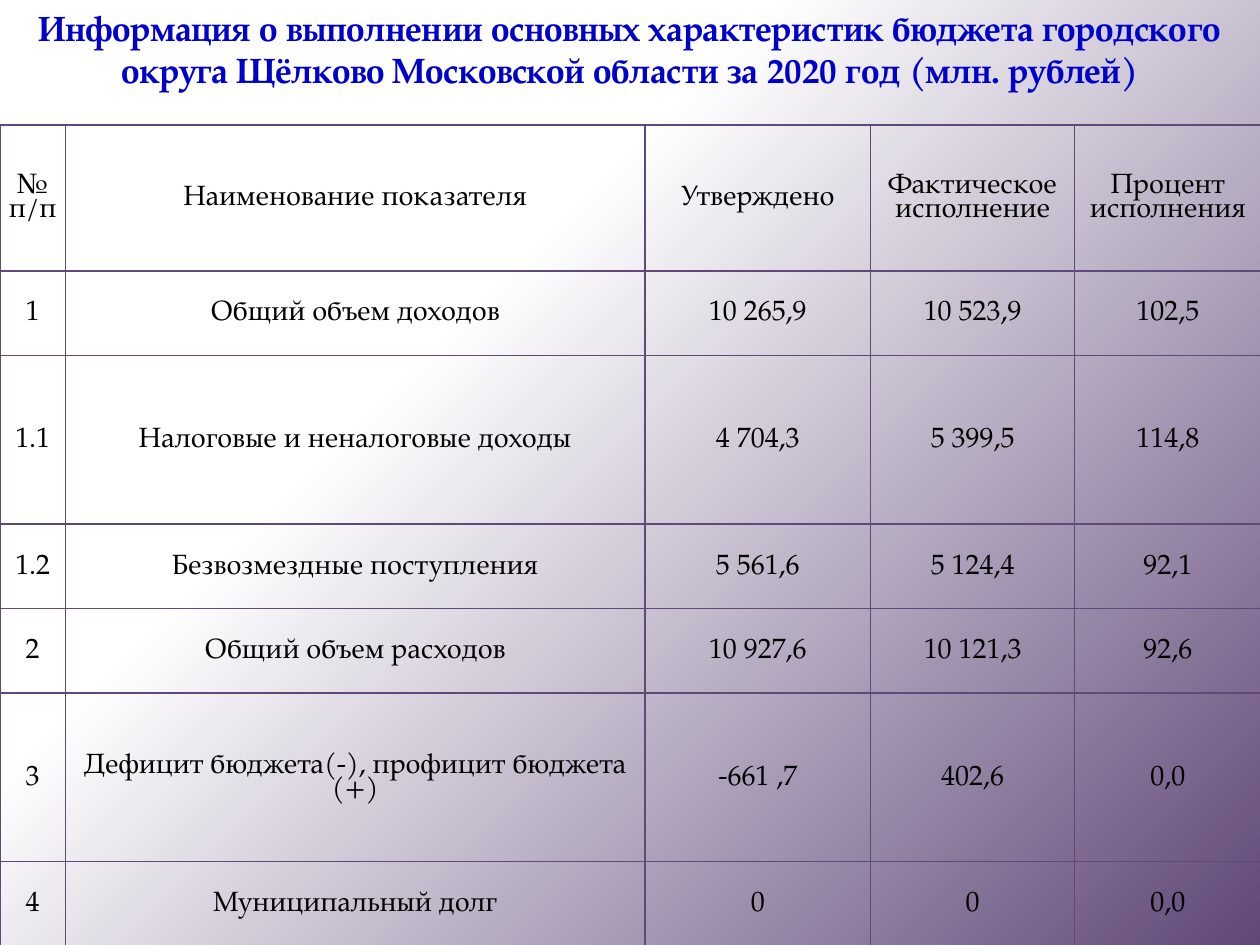
from copy import deepcopy
from lxml import etree
from pptx import Presentation
from pptx import util as u
from pptx.dml.color import RGBColor
from pptx.enum import text
from pptx.oxml.ns import qn

HEAD = "Информация о выполнении основных характеристик бюджета городского округа Щёлково Московской области за 2020 год (млн. рублей)"
ROWS = [
    ("№ п/п", "Наименование показателя", "Утверждено", "Фактическое исполнение", "Процент исполнения"),
    ("1", "Общий объем доходов", "10 265,9", "10 523,9", "102,5"),
    ("1.1", "Налоговые и неналоговые доходы", "4 704,3", "5 399,5", "114,8"),
    ("1.2", "Безвозмездные поступления", "5 561,6", "5 124,4", "92,1"),
    ("2", "Общий объем расходов", "10 927,6", "10 121,3", "92,6"),
    ("3", "Дефицит бюджета(-), профицит бюджета (+)", "-661 ,7", "402,6", "0,0"),
    ("4", "Муниципальный долг", "0", "0", "0,0"),
]
WIDTHS = [0.52, 4.6, 1.79, 1.62, 1.48]
UNIT = 0.67
HEIGHTS = [1.16] + [UNIT * n for n in (1, 2, 1, 1, 2, 1)]
PURPLE = "604878"
STOPS = [(0, "FFFFFF"), (0.35, "FFFFFF"), (1, PURPLE)]
FONT = "TeX Gyre Pagella"
TITLE = {"size": u.Pt(20), "bold": True, "name": FONT}
BODY = {"size": u.Pt(16), "bold": False, "name": FONT}
INSET = {"margin_left": u.Inches(0.01), "margin_right": u.Inches(0.01),
         "margin_top": u.Inches(0.01), "margin_bottom": 0,
         "vertical_anchor": text.MSO_ANCHOR.MIDDLE}


def tint(color, code):
    color.rgb = RGBColor.from_string(code)


def put(item, form):
    for key, val in form.items():
        setattr(item, key, val)


def write(frame, words, form, code, gap):
    frame.text = words
    line = frame.paragraphs[0]
    put(line, {"alignment": text.PP_ALIGN.CENTER, "line_spacing": gap, "space_before": u.Pt(0)})
    font = line.runs[0].font
    put(font, form)
    tint(font.color, code)


def border(cell, code):
    props = cell._tc.get_or_add_tcPr()
    for side in ("lnL", "lnR", "lnT", "lnB"):
        line = etree.SubElement(props, qn("a:" + side), w=str(u.Pt(1)))
        fill = etree.SubElement(line, qn("a:solidFill"))
        etree.SubElement(fill, qn("a:srgbClr"), val=code)


def shade(slide):
    fill = slide.background.fill
    fill.gradient()
    fill.gradient_angle = 315
    group = slide.element.find(".//" + qn("a:gsLst"))
    group.insert(1, deepcopy(group[0]))
    for stop, (pos, code) in zip(fill.gradient_stops, STOPS):
        stop.position = pos
        tint(stop.color, code)


def main():
    deck = Presentation()
    deck.slide_width, deck.slide_height = u.Inches(10), u.Inches(7.5)
    slide = deck.slides.add_slide(deck.slide_layouts[5])
    shade(slide)

    title = slide.shapes.title
    put(title, {"left": 0, "top": 0, "width": deck.slide_width, "height": u.Inches(0.77)})
    frame = title.text_frame
    put(frame, {"word_wrap": True, "vertical_anchor": text.MSO_ANCHOR.MIDDLE,
                "auto_size": text.MSO_AUTO_SIZE.SHAPE_TO_FIT_TEXT})
    write(frame, HEAD, TITLE, "0000CC", 1.0)

    table = slide.shapes.add_table(len(ROWS), len(WIDTHS), 0, u.Inches(0.99),
                                   deck.slide_width, u.Inches(sum(HEIGHTS))).table
    put(table, {"first_row": False, "horz_banding": False})
    for col, wide in zip(table.columns, WIDTHS):
        col.width = u.Inches(wide)
    for row, high, words in zip(table.rows, HEIGHTS, ROWS):
        row.height = u.Inches(high)
        for cell, word in zip(row.cells, words):
            put(cell, INSET)
            border(cell, PURPLE)
            cell.fill.background()
            write(cell.text_frame, word, BODY, "000000", 0.85)

    deck.save("out.pptx")


if __name__ == "__main__":
    main()
